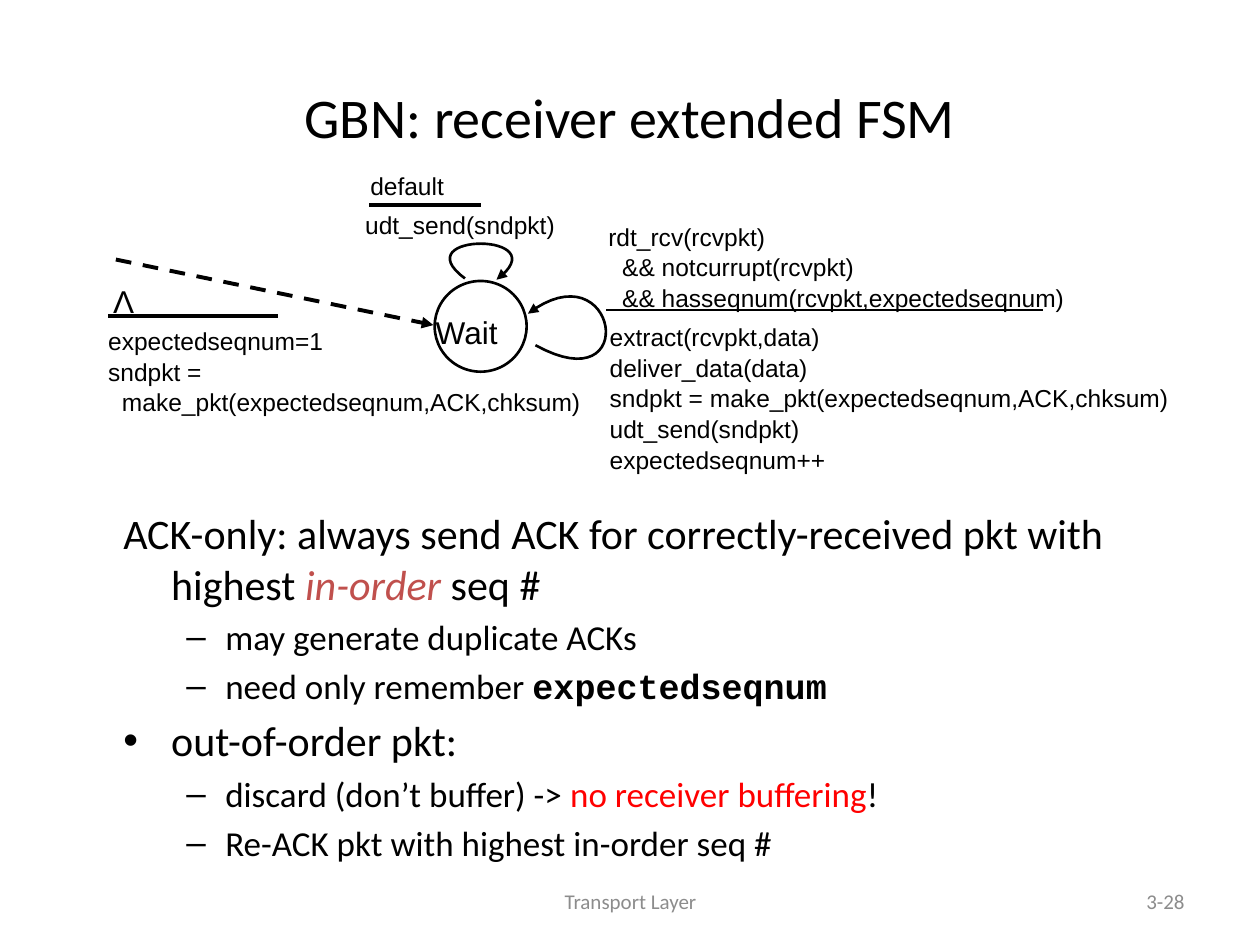
from dataclasses import dataclass

from lxml.etree import SubElement
from pptx import Presentation
from pptx.dml.color import RGBColor
from pptx.enum.dml import MSO_LINE
from pptx.enum.shapes import MSO_CONNECTOR, MSO_SHAPE
from pptx.enum.text import MSO_ANCHOR, PP_ALIGN
from pptx.oxml.ns import qn
from pptx.util import Inches, Pt


@dataclass(frozen=True)
class Theme:
    ink: str = "000000"
    paper: str = "FFFFFF"
    muted: str = "8C8C8C"
    accent: str = "C0504D"
    alert: str = "FF0000"
    prose: str = "Calibri"
    diagram: str = "Arial"
    code: str = "Courier New"
    title: int = 32
    point: int = 24
    subpoint: int = 20
    state: int = 18
    label: int = 14
    footer: int = 12
    thin: float = 1.5
    thick: float = 2.25


THEME = Theme()
COLUMNS, ROWS = 100, 75  # square grid cells of a tenth of an inch


def grid(cells):
    return Inches(cells / 10)


def style_run(run, size, font, color=THEME.ink, **emphasis):
    run.font.size = Pt(size)
    run.font.name = font
    run.font.color.rgb = RGBColor.from_string(color)
    for name, value in emphasis.items():
        setattr(run.font, name, value)


def text_frame(slide, box, anchor=MSO_ANCHOR.TOP, wrap=True):
    frame = slide.shapes.add_textbox(*map(grid, box)).text_frame
    frame.word_wrap = wrap
    frame.vertical_anchor = anchor
    return frame


def add_footer(slide, box, wording, align):
    frame = text_frame(slide, box, MSO_ANCHOR.MIDDLE)
    frame.text = wording
    frame.paragraphs[0].alignment = align
    style_run(frame.paragraphs[0].runs[0], THEME.footer, THEME.prose, THEME.muted)


def add_label(slide, box, lines, size=THEME.label, indented=(), wrap=True):
    """Diagram text; the line numbers in indented are set in a little."""
    frame = text_frame(slide, box, wrap=wrap)
    frame.text = "\n".join(lines)
    for number, paragraph in enumerate(frame.paragraphs):
        paragraph.line_spacing = 1.04
        if number in indented:
            paragraph._p.get_or_add_pPr().set("marL", str(Inches(0.11)))
        style_run(paragraph.runs[0], size, THEME.diagram)


def style_line(shape, width, dashed=False, arrow=False):
    shape.line.color.rgb = RGBColor.from_string(THEME.ink)
    shape.line.width = Pt(width)
    if dashed:
        shape.line.dash_style = MSO_LINE.DASH
    if arrow:
        SubElement(shape.line._get_or_add_ln(), qn("a:tailEnd"), type="triangle")


def add_line(slide, start, end, width, **ends):
    line = slide.shapes.add_connector(
        MSO_CONNECTOR.STRAIGHT, *map(grid, (*start, *end)))
    style_line(line, width, **ends)
    SubElement(line._element.spPr, qn("a:effectLst"))


def add_loop(slide, *controls, steps=32):
    """Transition back to the same state, along a cubic Bézier curve."""
    def at(t):
        weights = ((1 - t) ** 3, 3 * t * (1 - t) ** 2, 3 * t * t * (1 - t), t ** 3)
        return tuple(grid(sum(w * c[axis] for w, c in zip(weights, controls)))
                     for axis in (0, 1))

    builder = slide.shapes.build_freeform(*at(0))
    builder.add_line_segments([at(i / steps) for i in range(1, steps + 1)], close=False)
    loop = builder.convert_to_shape()
    loop.shadow.inherit = False
    loop.fill.background()
    style_line(loop, THEME.thin, arrow=True)


def add_state(slide, box):
    state = slide.shapes.add_shape(MSO_SHAPE.OVAL, *map(grid, box))
    state.shadow.inherit = False
    state.fill.solid()
    state.fill.fore_color.rgb = RGBColor.from_string(THEME.paper)
    style_line(state, THEME.thin)


def add_outline(slide, box, points):
    """Each point is a level, a bullet or None, and its (text, style) pieces."""
    frame = text_frame(slide, box)
    for number, (level, bullet, pieces) in enumerate(points):
        paragraph = frame.paragraphs[0] if number == 0 else frame.add_paragraph()
        size = (THEME.point, THEME.subpoint)[level]
        margin, hanging = ((0.38, 0.38), (0.81, 0.31))[level]
        paragraph.level = level
        paragraph.space_before = Pt(size * 0.2)
        properties = paragraph._p.get_or_add_pPr()
        properties.set("marL", str(Inches(margin)))
        properties.set("indent", str(-Inches(hanging)))
        if bullet:
            SubElement(properties, qn("a:buFont"), typeface=THEME.diagram)
            SubElement(properties, qn("a:buChar"), char=bullet)
        else:
            SubElement(properties, qn("a:buNone"))
        for wording, style in pieces:
            run = paragraph.add_run()
            run.text = wording
            style_run(run, size, **{"font": THEME.prose, **style})


def add_title(slide, box, wording):
    title = slide.shapes.title
    title.left, title.top, title.width, title.height = map(grid, box)
    title.text_frame.text = wording
    title.text_frame.vertical_anchor = MSO_ANCHOR.MIDDLE
    title.text_frame.paragraphs[0].alignment = PP_ALIGN.CENTER
    style_run(title.text_frame.paragraphs[0].runs[0], THEME.title, THEME.prose)


def add_state_machine(slide):
    # The single state
    add_state(slide, (34.5, 22.3, 7.3, 7.2))
    add_label(slide, (33.6, 24.2, 8.8, 2.6), ["Wait"], THEME.state)

    # Start
    add_line(slide, (9.2, 20.6), (34.4, 25.8), THEME.thick, dashed=True, arrow=True)
    add_label(slide, (8, 21.8, 3.5, 3.7), ["Λ"], THEME.state, wrap=False)
    add_line(slide, (8.6, 25.1), (22.1, 25.1), THEME.thick)
    add_label(slide, (7.6, 25.3, 39.8, 10.7),
              ["expectedseqnum=1", "sndpkt =",
               "make_pkt(expectedseqnum,ACK,chksum)"], indented=(2,))

    # Default: resend the last ACK
    add_label(slide, (28.4, 13, 7.9, 2.7), ["default"])
    add_line(slide, (29.3, 16.3), (38.2, 16.3), THEME.thick)
    add_label(slide, (28, 16.1, 17.7, 3.4), ["udt_send(sndpkt)"])
    add_loop(slide, (36.9, 22.1), (31.9, 18.4), (44.5, 18.4), (39.4, 22.2))

    # Expected packet arrives
    add_label(slide, (47.3, 17, 39, 6.2),
              ["rdt_rcv(rcvpkt)", "&& notcurrupt(rcvpkt)",
               "&& hasseqnum(rcvpkt,expectedseqnum)"], indented=(1, 2))
    add_line(slide, (48.1, 24.6), (82.8, 24.6), THEME.thin)
    add_label(slide, (47.4, 25, 47.2, 9.4),
              ["extract(rcvpkt,data)", "deliver_data(data)",
               "sndpkt = make_pkt(expectedseqnum,ACK,chksum)",
               "udt_send(sndpkt)", "expectedseqnum++"])
    add_loop(slide, (42.5, 27.4), (51, 32.1), (49, 19.5), (41.9, 24.9))


def main():
    deck = Presentation()
    deck.slide_width, deck.slide_height = grid(COLUMNS), grid(ROWS)
    slide = deck.slides.add_slide(deck.slide_layouts[5])

    add_footer(slide, (34.2, 69.5, 31.7, 4), "Transport Layer", PP_ALIGN.CENTER)
    add_footer(slide, (71.7, 69.5, 23.3, 4), "3-28", PP_ALIGN.RIGHT)
    add_title(slide, (5, 3, 90, 12.5), "GBN: receiver extended FSM")
    add_outline(slide, (8.8, 39.8, 89.1, 31.2), [
        (0, None, [
            ("ACK-only: always send ACK for correctly-received pkt with highest ", {}),
            ("in-order", {"color": THEME.accent, "italic": True}),
            (" seq #", {})]),
        (1, "–", [("may generate duplicate ACKs", {})]),
        (1, "–", [("need only remember ", {}),
                  ("expectedseqnum", {"font": THEME.code, "bold": True})]),
        (0, "•", [("out-of-order pkt:", {})]),
        (1, "–", [("discard (don’t buffer) -> ", {}),
                  ("no receiver buffering", {"color": THEME.alert}),
                  ("!", {})]),
        (1, "–", [("Re-ACK pkt with highest in-order seq #", {})]),
    ])
    add_state_machine(slide)
    deck.save("out.pptx")


if __name__ == "__main__":
    main()
